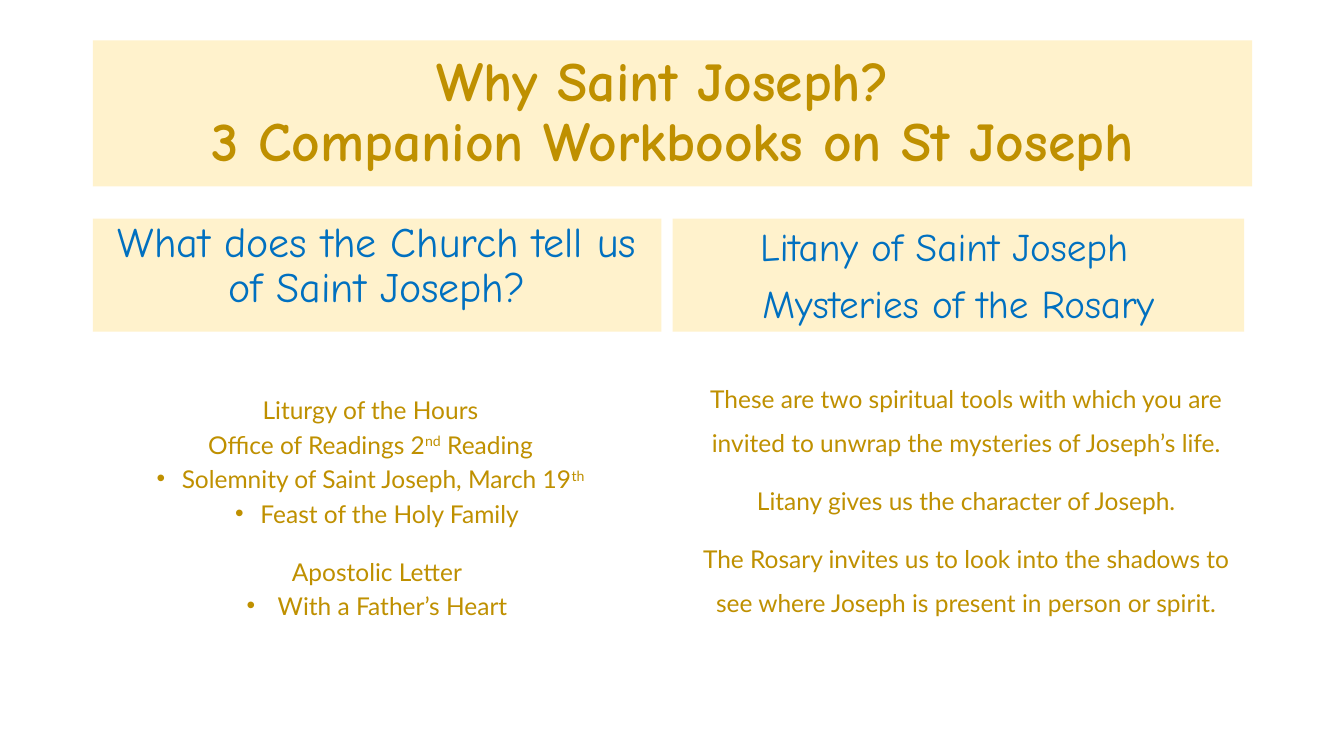
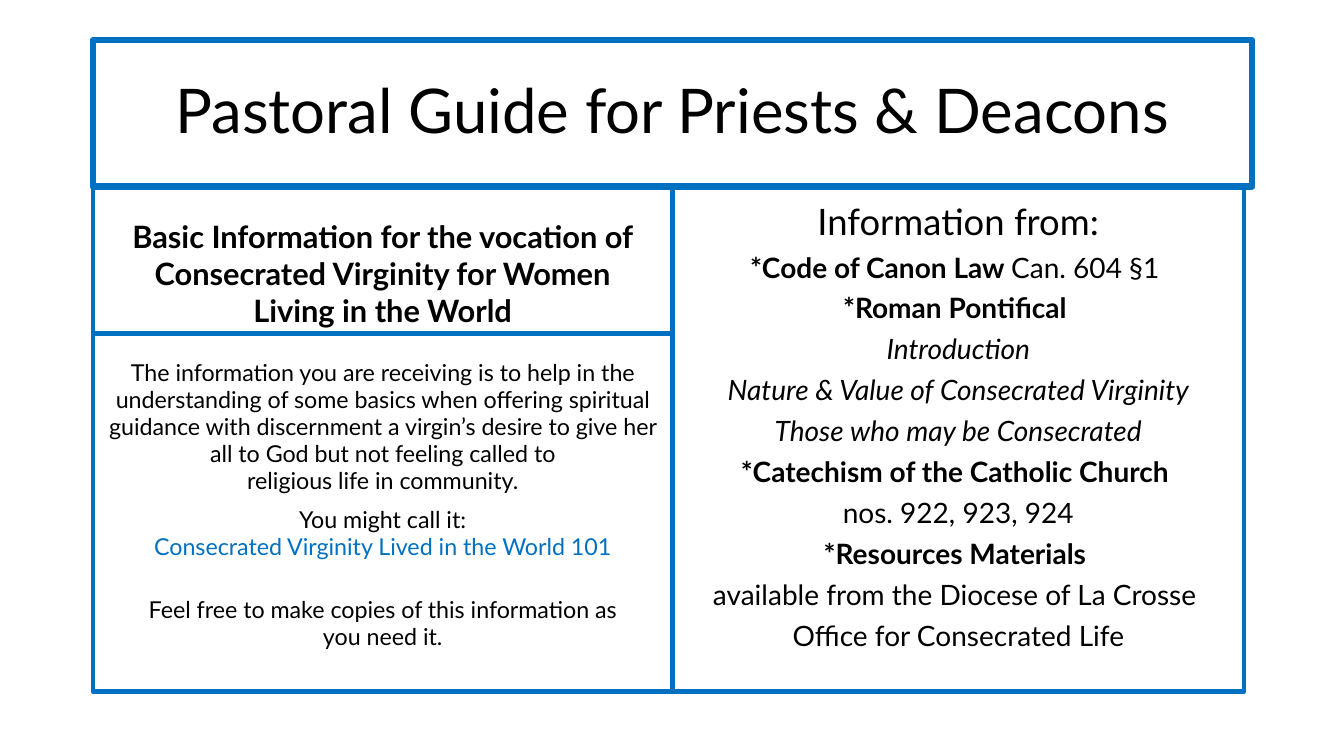
from lxml.etree import SubElement
from pptx import Presentation
from pptx.dml.color import RGBColor
from pptx.enum.text import MSO_ANCHOR as Anchor, MSO_AUTO_SIZE as AutoSize, PP_ALIGN as Align
from pptx.oxml.ns import qn
from pptx.util import Inches, Pt

CREAM = RGBColor(0xFF, 0xF2, 0xCC)
GOLD = RGBColor(0xBF, 0x90, 0x00)
BLUE = RGBColor(0x00, 0x70, 0xC0)
BLACK = RGBColor(0x00, 0x00, 0x00)
SCRIPT_FONT = "Comic Neue"
PLAIN_FONT = "Lato"

COMPARISON_LAYOUT = 4
TITLE, LEFT_HEADING, LEFT_BODY, RIGHT_HEADING, RIGHT_BODY = range(5)
TITLE_BOX = (0.92, 0.4, 11.5, 1.45)
BULLET_INDENT = Inches(0.25)


def add_comparison_slide(presentation):
    """Add a slide with a title and two columns."""
    return presentation.slides.add_slide(presentation.slide_layouts[COMPARISON_LAYOUT])


def place(slide, index, box, anchor=Anchor.TOP, top=0.05, bottom=0.05,
          fill=None, border=None):
    """Move a placeholder, style its box and return it."""
    shape = slide.placeholders[index]
    shape.left, shape.top, shape.width, shape.height = map(Inches, box)
    if fill is not None:
        shape.fill.solid()
        shape.fill.fore_color.rgb = fill
    if border is not None:
        shape.line.color.rgb = BLUE
        shape.line.width = Pt(border)
    frame = shape.text_frame
    frame.word_wrap = True
    frame.auto_size = AutoSize.NONE
    frame.vertical_anchor = anchor
    frame.margin_left = frame.margin_right = Inches(0.1)
    frame.margin_top, frame.margin_bottom = Inches(top), Inches(bottom)
    return shape


def set_bullet(paragraph, bullet):
    """Switch the bullet and its hanging indent on or off."""
    properties = paragraph._p.get_or_add_pPr()
    indent = BULLET_INDENT if bullet else 0
    properties.set("marL", str(indent))
    properties.set("indent", str(-indent))
    if bullet:
        SubElement(properties, qn("a:buFont")).set("typeface", "Arial")
        SubElement(properties, qn("a:buChar")).set("char", "•")
    else:
        SubElement(properties, qn("a:buNone"))


def add_run(paragraph, text, font_name, size, color, bold=False, italic=False, raised=False):
    """Add a formatted run to a paragraph."""
    run = paragraph.add_run()
    run.text = text
    font = run.font
    font.name, font.size, font.bold, font.italic = font_name, Pt(size), bold, italic
    font.color.rgb = color
    if raised:
        font._element.set("baseline", "30000")


def write(shape, lines, font_name, size, color, spacing=0.9, before=10, **style):
    """Write centred paragraphs, each given as runs and its own settings."""
    frame = shape.text_frame
    base = {"font_name": font_name, "size": size, "color": color, **style}
    for number, (runs, settings) in enumerate(lines):
        paragraph = frame.add_paragraph() if number else frame.paragraphs[0]
        paragraph.alignment = Align.CENTER
        paragraph.line_spacing = spacing
        paragraph.space_before = Pt(settings.get("before", before) if number else 0)
        paragraph.space_after = Pt(0)
        set_bullet(paragraph, settings.get("bullet", False))
        if "right" in settings:
            paragraph._p.get_or_add_pPr().set("marR", str(Inches(settings["right"])))
        for text, run_style in runs:
            for part_number, part in enumerate(text.split("\v")):
                if part_number:
                    paragraph.add_line_break()
                add_run(paragraph, part, **{**base, **run_style})


def line(text, bullet=False, before=10, right=0, **style):
    """Describe a paragraph made of one run."""
    return [(text, style)], {"bullet": bullet, "before": before, "right": right}


def mixed_line(*runs, **settings):
    """Describe a paragraph made of several runs."""
    return list(runs), settings


def build_workbooks_slide(presentation):
    """Build the slide on the Saint Joseph workbooks."""
    slide = add_comparison_slide(presentation)
    title = place(slide, TITLE, TITLE_BOX, Anchor.MIDDLE, fill=CREAM)
    write(title, [line("Why Saint Joseph? \v3 Companion Workbooks on St Joseph")],
          SCRIPT_FONT, 39.6, GOLD, bold=True)

    church = place(slide, LEFT_HEADING, (0.92, 2.17, 5.64, 1.12), Anchor.BOTTOM,
                   top=0, bottom=0.2, fill=CREAM)
    write(church, [line("What does the Church tell us of Saint Joseph?")],
          SCRIPT_FONT, 30, BLUE)

    readings = place(slide, LEFT_BODY, (0.92, 3.61, 5.64, 2.75), top=0.39)
    raised = {"raised": True}
    write(readings, [
        line("Liturgy of the Hours", right=0.13),
        mixed_line(("Office of Readings 2", {}), ("nd", raised), (" Reading", {}), right=0.13),
        mixed_line(("Solemnity of Saint Joseph, March 19", {}), ("th", raised), bullet=True),
        line("Feast of the Holy Family", bullet=True),
        line("Apostolic Letter", before=26.8),
        line(" With a Father’s Heart", bullet=True),
    ], PLAIN_FONT, 17.5, GOLD, spacing=0.7)

    prayers = place(slide, RIGHT_HEADING, (6.67, 2.17, 5.67, 1.12), Anchor.BOTTOM, fill=CREAM)
    write(prayers, [line("Litany of Saint Joseph", right=0.28),
                    line("Mysteries of the Rosary")], SCRIPT_FONT, 28, BLUE)

    tools = place(slide, RIGHT_BODY, (6.75, 3.61, 5.67, 2.66))
    write(tools, [
        line("These are two spiritual tools with which you are invited to unwrap "
             "the mysteries of Joseph’s life."),
        line("Litany gives us the character of Joseph."),
        line("The Rosary invites us to look into the shadows to see where Joseph "
             "is present in person or spirit."),
    ], PLAIN_FONT, 17.5, GOLD, spacing=1.5)


def build_guide_slide(presentation):
    """Build the slide on the pastoral guide."""
    slide = add_comparison_slide(presentation)
    title = place(slide, TITLE, TITLE_BOX, Anchor.MIDDLE, border=4.5)
    write(title, [line("Pastoral Guide for Priests & Deacons")], PLAIN_FONT, 44, BLACK)

    basics = place(slide, LEFT_HEADING, (0.92, 1.86, 5.75, 1.45), Anchor.BOTTOM, border=3)
    write(basics, [line("Basic Information for the vocation of Consecrated Virginity "
                        "for Women\vLiving in the World")],
          PLAIN_FONT, 22, BLACK, spacing=1.0, bold=True)

    purpose = place(slide, LEFT_BODY, (0.92, 3.31, 5.75, 3.55), top=0.26, border=3)
    write(purpose, [
        line("The information you are receiving is to help in the understanding of "
             "some basics when offering spiritual guidance with discernment a virgin’s "
             "desire to give her all to God but not feeling called to\v"
             "religious life in community."),
        line("You might call it:", before=8),
        line("Consecrated Virginity Lived in the World 101", before=0, color=BLUE),
        line("Feel free to make copies of this information as\vyou need it.", before=25.7),
    ], PLAIN_FONT, 16.6, BLACK, spacing=0.97)

    slide.placeholders[RIGHT_HEADING].element.getparent().remove(
        slide.placeholders[RIGHT_HEADING].element)
    sources = place(slide, RIGHT_BODY, (6.67, 1.86, 5.67, 5), top=0.2, border=3)
    write(sources, [
        line("Information from:", size=26),
        mixed_line(("*Code of Canon Law ", {"bold": True}), ("Can. 604 §1 ", {})),
        line("*Roman Pontifical ", bold=True),
        line("Introduction", italic=True),
        line("Nature & Value of Consecrated Virginity", italic=True),
        line("Those who may be Consecrated", italic=True),
        line("*Catechism of the Catholic Church ", bold=True),
        line("nos. 922, 923, 924"),
        line("*Resources Materials ", bold=True),
        line("available from the Diocese of La Crosse "),
        line("Office for Consecrated Life"),
    ], PLAIN_FONT, 20, BLACK, spacing=0.8)


def main():
    """Build and save the presentation."""
    presentation = Presentation()
    presentation.slide_width, presentation.slide_height = Inches(13.33), Inches(7.5)
    build_workbooks_slide(presentation)
    build_guide_slide(presentation)
    presentation.save("out.pptx")


if __name__ == "__main__":
    main()
